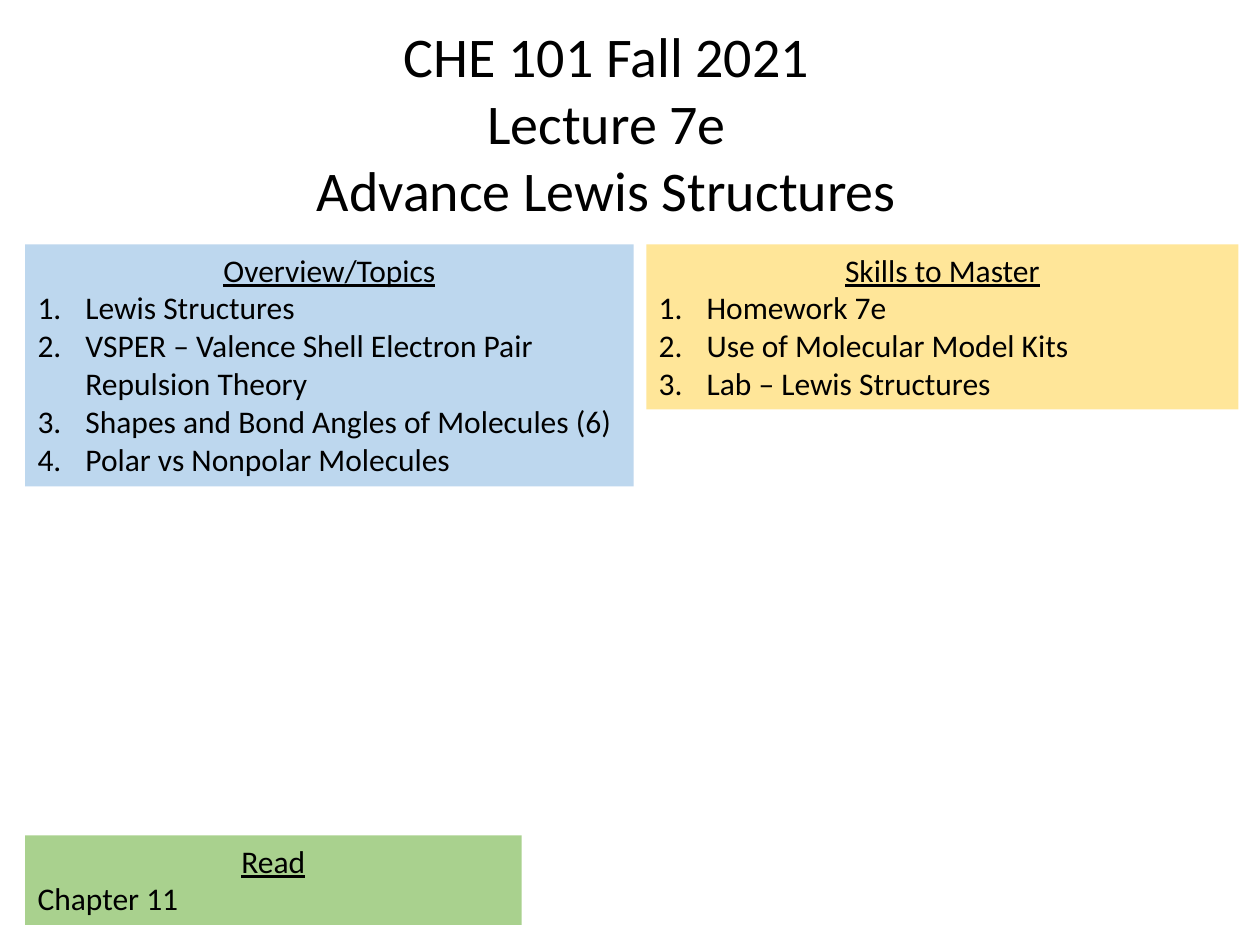
from pptx import Presentation
from pptx.dml.color import RGBColor
from pptx.enum.text import MSO_ANCHOR as Anchor, MSO_AUTO_SIZE as AutoSize, PP_ALIGN as Align
from pptx.util import Inches, Pt
from lxml.etree import SubElement
from pptx.oxml.ns import qn

COLORS = {"text": "000000", "topics": "BDD7EE", "skills": "FFE699", "read": "A9D18E"}
FONT = "Calibri"
LEFT, PANEL_TOP = 0.2, 1.94


def write(para, text, size=18, align=Align.LEFT, underline=False, numbered=False):
    para.alignment = align
    span = para.add_run()
    span.text = text
    span.font.name = FONT
    span.font.size = Pt(size)
    span.font.underline = underline
    span.font.color.rgb = RGBColor.from_string(COLORS["text"])
    if numbered:
        properties = para._p.get_or_add_pPr()
        indent = Inches(0.38)
        properties.set("marL", str(indent))
        properties.set("indent", str(-indent))
        SubElement(properties, qn("a:buFont"), typeface="+mj-lt")
        SubElement(properties, qn("a:buAutoNum"), type="arabicPeriod")


def place_title(page, bounds, lines):
    title = page.shapes.title
    title.left, title.top, title.width, title.height = map(Inches, bounds)
    frame = title.text_frame
    frame.word_wrap = False
    frame.auto_size = AutoSize.NONE
    frame.vertical_anchor = Anchor.TOP
    for index, line in enumerate(lines):
        para = frame.add_paragraph() if index else frame.paragraphs[0]
        write(para, line, size=32, align=Align.CENTER)


def place_panel(page, bounds, color, heading, items, numbered=True):
    box = page.shapes.add_textbox(*map(Inches, bounds))
    box.fill.solid()
    box.fill.fore_color.rgb = RGBColor.from_string(COLORS[color])
    frame = box.text_frame
    frame.word_wrap = True
    frame.auto_size = AutoSize.SHAPE_TO_FIT_TEXT
    write(frame.paragraphs[0], heading, align=Align.CENTER, underline=True)
    for item in items:
        write(frame.add_paragraph(), item, numbered=numbered)


def main():
    deck = Presentation()
    deck.slide_width, deck.slide_height = Inches(10), Inches(7.5)
    page = deck.slides.add_slide(deck.slide_layouts[5])
    place_title(page, (2.39, 0.12, 4.85, 1.72),
                ["CHE 101 Fall 2021", "Lecture 7e", "Advance Lewis Structures"])
    place_panel(page, (LEFT, PANEL_TOP, 4.83, 1.92), "topics", "Overview/Topics", [
        "Lewis Structures",
        "VSPER – Valence Shell Electron Pair Repulsion Theory",
        "Shapes and Bond Angles of Molecules (6)",
        "Polar vs Nonpolar Molecules",
    ])
    place_panel(page, (5.13, PANEL_TOP, 4.7, 1.31), "skills", "Skills to Master", [
        "Homework 7e",
        "Use of Molecular Model Kits",
        "Lab – Lewis Structures",
    ])
    place_panel(page, (LEFT, 6.63, 3.94, 0.71), "read", "Read", ["Chapter 11"], numbered=False)
    deck.save("out.pptx")


if __name__ == "__main__":
    main()
